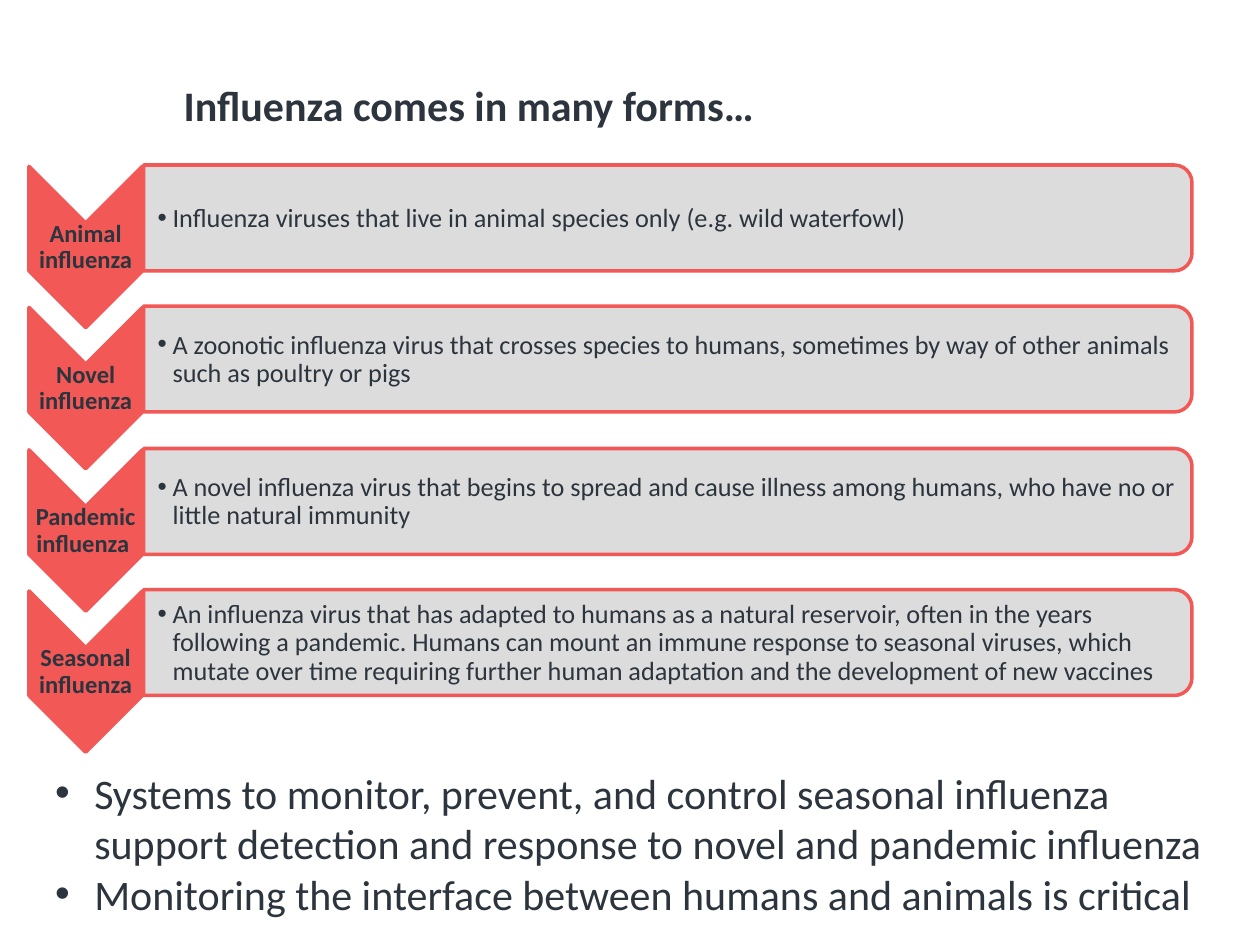
from dataclasses import dataclass

from lxml import etree
from pptx import Presentation
from pptx.dml.color import RGBColor
from pptx.enum import shapes, text
from pptx.oxml.ns import qn
from pptx.util import Inches, Pt


@dataclass(frozen=True)
class Theme:
    font: str = "Calibri"
    ink: RGBColor = RGBColor(0x2C, 0x34, 0x3E)
    accent: RGBColor = RGBColor(0xF1, 0x58, 0x56)
    panel: RGBColor = RGBColor(0xD9, 0xD9, 0xD9)
    panel_opacity: int = 90
    large: int = 24
    body: int = 15
    label: int = 14
    outline: int = 2


@dataclass(frozen=True)
class Frame:
    left: float
    top: float
    width: float
    height: float


@dataclass(frozen=True)
class Form:
    label: str
    description: str


THEME = Theme()
FIRST_TOP, ROW_PITCH = 1.31, 1.123
FORMS = [
    Form("Animal influenza",
         "Influenza viruses that live in animal species only (e.g. wild waterfowl)"),
    Form("Novel influenza",
         "A zoonotic influenza virus that crosses species to humans, sometimes by way "
         "of other animals such as poultry or pigs"),
    Form("Pandemic influenza ",
         "A novel influenza virus that begins to spread and cause illness among humans, "
         "who have no or little natural immunity"),
    Form("Seasonal influenza",
         "An influenza virus that has adapted to humans as a natural reservoir, often in "
         "the years following a pandemic. Humans can mount an immune response to seasonal "
         "viruses, which mutate over time requiring further human adaptation and the "
         "development of new vaccines"),
]
TAKEAWAYS = [
    ["Systems to monitor, prevent, and control seasonal influenza ",
     "support detection and response to novel and pandemic influenza"],
    ["Monitoring the interface between humans and animals is critical"],
]


def add_turned_shape(slide, preset: shapes.MSO_SHAPE, frame: Frame, fill: RGBColor):
    """Add a shape turned by 90 degrees that covers the given frame."""
    left = frame.left + (frame.width - frame.height) / 2
    top = frame.top + (frame.height - frame.width) / 2
    shape = slide.shapes.add_shape(preset, Inches(left), Inches(top),
                                   Inches(frame.height), Inches(frame.width))
    shape.rotation = 90
    shape.shadow.inherit = False
    shape.fill.solid()
    shape.fill.fore_color.rgb = fill
    shape.line.color.rgb = THEME.accent
    shape.line.width = Pt(THEME.outline)
    return shape


def set_opacity(shape, percent: int) -> None:
    color = shape.fill._xPr.find(qn("a:solidFill"))[0]
    etree.SubElement(color, qn("a:alpha"), val=str(percent * 1000))


def add_text_frame(slide, frame: Frame):
    box = slide.shapes.add_textbox(Inches(frame.left), Inches(frame.top),
                                   Inches(frame.width), Inches(frame.height))
    return box.text_frame


def fit_to_text(text_frame) -> None:
    text_frame.word_wrap = False
    text_frame.auto_size = text.MSO_AUTO_SIZE.SHAPE_TO_FIT_TEXT


def fit_in_row(text_frame, left_inset: float) -> None:
    text_frame.word_wrap = True
    text_frame.vertical_anchor = text.MSO_ANCHOR.MIDDLE
    text_frame.margin_left = Inches(left_inset)
    text_frame.margin_top = text_frame.margin_right = Inches(0.01)
    text_frame.margin_bottom = Inches(0.01)
    text_frame.paragraphs[0].line_spacing = 0.9


def add_bullet(paragraph, indent: float) -> None:
    properties = paragraph._p.get_or_add_pPr()
    properties.set("marL", str(Inches(indent)))
    properties.set("indent", str(-Inches(indent)))
    etree.SubElement(properties, qn("a:buFont"), typeface="Arial")
    etree.SubElement(properties, qn("a:buChar"), char="•")


def write(paragraph, words: str, size: int, bold: bool = False) -> None:
    run = paragraph.add_run()
    run.text = words
    run.font.name = THEME.font
    run.font.size = Pt(size)
    run.font.bold = bold
    run.font.color.rgb = THEME.ink


def add_form(slide, form: Form, top: float) -> None:
    add_turned_shape(slide, shapes.MSO_SHAPE.CHEVRON,
                     Frame(0.23, top + 0.01, 0.9, 1.28), THEME.accent)
    label = add_text_frame(slide, Frame(0.23, top + 0.46, 0.9, 0.39))
    fit_in_row(label, 0.01)
    label.paragraphs[0].alignment = text.PP_ALIGN.CENTER
    write(label.paragraphs[0], form.label, THEME.label, bold=True)

    panel = add_turned_shape(slide, shapes.MSO_SHAPE.ROUND_2_SAME_RECTANGLE,
                             Frame(1.14, top, 8.32, 0.84), THEME.panel)
    set_opacity(panel, THEME.panel_opacity)
    description = add_text_frame(slide, Frame(1.13, top + 0.05, 8.28, 0.75))
    fit_in_row(description, 0.12)
    add_bullet(description.paragraphs[0], 0.12)
    write(description.paragraphs[0], form.description, THEME.body)


def add_takeaways(slide) -> None:
    takeaways = add_text_frame(slide, Frame(0.34, 6.04, 9.47, 1.62))
    fit_to_text(takeaways)
    for index, lines in enumerate(TAKEAWAYS):
        paragraph = takeaways.add_paragraph() if index else takeaways.paragraphs[0]
        add_bullet(paragraph, 0.31)
        for number, line in enumerate(lines):
            if number:
                paragraph.add_line_break()
            write(paragraph, line, THEME.large)


def main() -> None:
    deck = Presentation()
    deck.slide_width, deck.slide_height = Inches(10), Inches(7.5)
    slide = deck.slides.add_slide(deck.slide_layouts[6])

    title = add_text_frame(slide, Frame(1.36, 0.58, 4.8, 0.5))
    fit_to_text(title)
    write(title.paragraphs[0], "Influenza comes in many forms…", THEME.large, bold=True)

    add_takeaways(slide)
    for row, form in enumerate(FORMS):
        add_form(slide, form, round(FIRST_TOP + row * ROW_PITCH, 2))
    deck.save("out.pptx")


if __name__ == "__main__":
    main()
